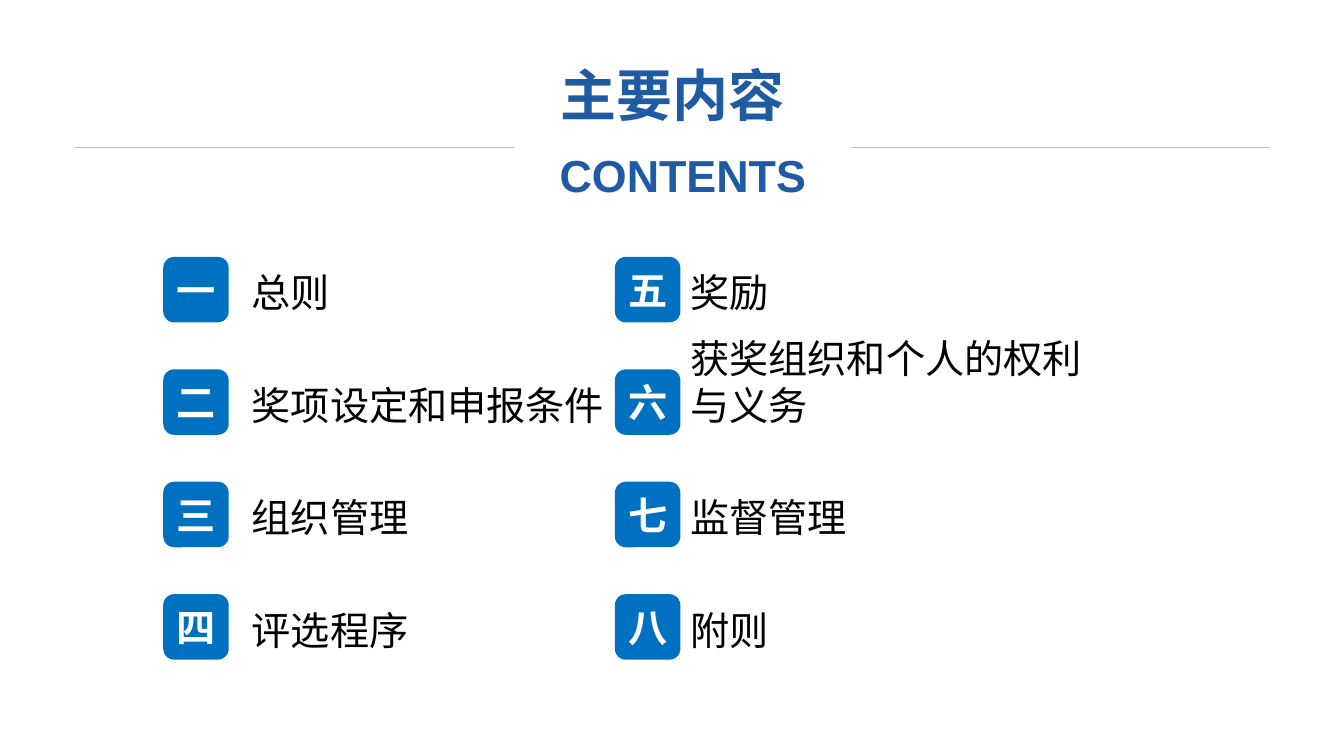
from lxml import etree
from pptx import Presentation
from pptx.dml.color import RGBColor
from pptx.enum.shapes import MSO_CONNECTOR, MSO_SHAPE
from pptx.enum.text import MSO_ANCHOR, PP_ALIGN
from pptx.oxml.ns import qn
from pptx.util import Pt

ROUND_RECT = MSO_SHAPE.ROUNDED_RECTANGLE
RECT = MSO_SHAPE.RECTANGLE
STRAIGHT = MSO_CONNECTOR.STRAIGHT
TOP, MIDDLE, BOTTOM = MSO_ANCHOR.TOP, MSO_ANCHOR.MIDDLE, MSO_ANCHOR.BOTTOM
LEFT, CENTER = PP_ALIGN.LEFT, PP_ALIGN.CENTER

COLORS = {
    "white": "FFFFFF",
    "heading": "1E5BA3",
    "badge": "0070C0",
    "rule": "BFBFBF",
    "text": "000000",
}

# Badge left, label left, and the numbered sections of each column
COLUMNS = [
    (116.6, 172.8, [("一", "总则"), ("二", "奖项设定和申报条件"),
                    ("三", "组织管理"), ("四", "评选程序")]),
    (439.2, 486, [("五", "奖励"), ("六", "获奖组织和个人的权利与义务"),
                  ("七", "监督管理"), ("八", "附则")]),
]
FIRST_TOP, ROW_PITCH = 183.5, 80.3
BADGE_SIZE = 46.8


class ContentsSlide:
    def __init__(self, prs):
        self.s = prs.slides.add_slide(prs.slide_layouts[5])

    def color(self, name):
        return RGBColor.from_string(COLORS[name])

    def set_text(self, sp, text, size, font, color, bold=False,
                 align=CENTER, anchor=MIDDLE, inset=(0, 0), wrap=True):
        """Set one line of text; inset is horizontal, vertical."""
        tf = sp.text_frame
        tf.text = text
        tf.word_wrap = wrap
        tf.vertical_anchor = anchor
        tf.margin_left = tf.margin_right = Pt(inset[0])
        tf.margin_top = tf.margin_bottom = Pt(inset[1])
        p = tf.paragraphs[0]
        p.alignment = align
        p.line_spacing = 1.0
        p.space_before = Pt(0)
        r = p.runs[0]
        r.font.size = Pt(size)
        r.font.bold = bold
        r.font.color.rgb = self.color(color)
        r.font.name = font
        ea = etree.SubElement(r.font._element, qn("a:ea"))
        ea.set("typeface", font)

    def fill(self, sp, color):
        sp.fill.solid()
        sp.fill.fore_color.rgb = self.color(color)

    def shape(self, kind, left, top, width, height, color):
        sp = self.s.shapes.add_shape(kind, Pt(left), Pt(top), Pt(width), Pt(height))
        sp.shadow.inherit = False
        self.fill(sp, color)
        sp.line.fill.background()
        return sp

    def title(self, text, left, top, width, height):
        sp = self.s.shapes.title
        sp.left, sp.top, sp.width, sp.height = Pt(left), Pt(top), Pt(width), Pt(height)
        self.fill(sp, "white")
        self.set_text(sp, text, 40, "Arial", "heading", bold=True, anchor=TOP)

    def rule(self, x1, x2, y):
        line = self.s.shapes.add_connector(STRAIGHT, Pt(x1), Pt(y), Pt(x2), Pt(y))
        line.line.color.rgb = self.color("rule")
        line.line.width = Pt(0.25)
        etree.SubElement(line._element.spPr, qn("a:effectLst"))

    def subtitle(self, text, left, top, width, height):
        """White panel that also interrupts the rule behind it."""
        sp = self.shape(RECT, left, top, width, height, "white")
        self.set_text(sp, text, 32, "Arial", "heading", bold=True)

    def badge(self, numeral, left, top):
        sp = self.shape(ROUND_RECT, left, top, BADGE_SIZE, BADGE_SIZE, "badge")
        self.set_text(sp, numeral, 28, "Roboto", "white", bold=True)

    def label(self, text, left, top):
        sp = self.s.shapes.add_textbox(Pt(left), Pt(top), Pt(313.2), Pt(44.6))
        self.set_text(sp, text, 28, "Noto Sans CJK SC", "text", align=LEFT,
                      anchor=BOTTOM, inset=(7.2, 3.6), wrap=False)


def main():
    prs = Presentation()
    prs.slide_width, prs.slide_height = Pt(960), Pt(540)
    slide = ContentsSlide(prs)
    slide.title("主要内容", 378, 43.2, 204.5, 55.4)
    slide.rule(53.3, 907.2, 105.4)
    slide.subtitle("CONTENTS", 367.2, 99.4, 241.2, 51.1)
    for badge_left, label_left, sections in COLUMNS:
        for row, (numeral, name) in enumerate(sections):
            top = FIRST_TOP + row * ROW_PITCH
            slide.badge(numeral, badge_left, top)
            slide.label(name, label_left, top + 1)
    prs.save("out.pptx")


if __name__ == "__main__":
    main()
